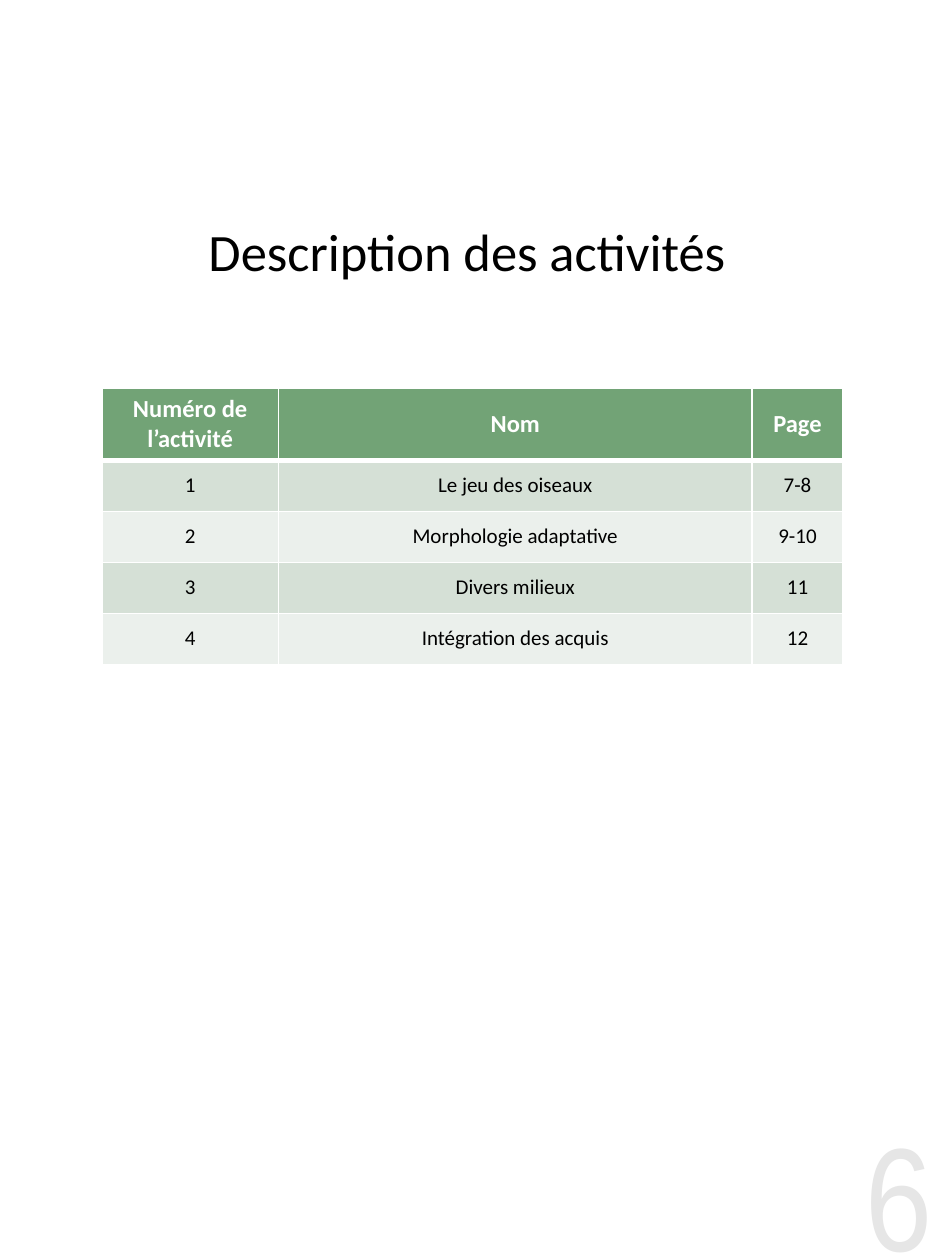
from lxml.etree import SubElement
from pptx import Presentation
from pptx.dml.color import RGBColor
from pptx.enum.text import MSO_ANCHOR, PP_ALIGN
from pptx.oxml.ns import qn
from pptx.util import Inches, Pt

COLORS = {"white": "FFFFFF", "black": "000000", "head": "72A376",
          "odd": "D5E0D6", "even": "EBF0EC", "number": "E6E6E6"}


def style(frame, size, color, bold=False, face="Calibri", align=PP_ALIGN.CENTER):
    for para in frame.paragraphs:
        para.alignment = align
        para.font.name = face
        para.font.size = Pt(size)
        para.font.bold = bold
        para.font.color.rgb = RGBColor.from_string(COLORS[color])


def border(cell, side, width):
    """Draw a white line on one side (L, R, T or B) of the cell."""
    line = SubElement(cell._tc.get_or_add_tcPr(), qn("a:ln" + side),
                      w=str(Pt(width)))
    fill = SubElement(line, qn("a:solidFill"))
    SubElement(fill, qn("a:srgbClr"), val=COLORS["white"])


deck = Presentation()
deck.slide_width, deck.slide_height = Inches(7.5), Inches(10)
slide = deck.slides.add_slide(deck.slide_layouts[5])

# Title
title = slide.shapes.title
title.left, title.top = Inches(1.55), Inches(1.61)
title.width, title.height = Inches(4.41), Inches(0.75)
title.fill.solid()
title.fill.fore_color.rgb = RGBColor.from_string(COLORS["white"])
title.text_frame.text = "Description des activités "
title.text_frame.vertical_anchor = MSO_ANCHOR.MIDDLE
style(title.text_frame, 30, "black")

# Table of activities
rows = [
    ("Numéro de\nl’activité", "Nom", "Page"),
    ("1", "Le jeu des oiseaux", "7-8"),
    ("2", "Morphologie adaptative", "9-10"),
    ("3", "Divers milieux", "11"),
    ("4", "Intégration des acquis", "12"),
]
widths = [1.4, 3.76, 0.72]
heights = [0.57] + [0.405] * 4
table = slide.shapes.add_table(len(rows), len(widths), Inches(0.81), Inches(3.08),
                               Inches(sum(widths)), Inches(sum(heights))).table
for col, width in zip(table.columns, widths):
    col.width = Inches(width)
for r, (row, height) in enumerate(zip(rows, heights)):
    table.rows[r].height = Inches(height)
    head = r == 0
    shade = "head" if head else "odd" if r % 2 else "even"
    for c, text in enumerate(row):
        cell = table.cell(r, c)
        cell.text = text
        cell.vertical_anchor = MSO_ANCHOR.MIDDLE
        style(cell.text_frame, 14 if head else 12,
              "white" if head else "black", bold=head)
        for side in "LRTB":
            thick = (head and side == "B") or (r == 1 and side == "T")
            border(cell, side, 3 if thick else 1)
        cell.fill.solid()
        cell.fill.fore_color.rgb = RGBColor.from_string(COLORS[shade])

# Page number
number = slide.shapes.add_textbox(Inches(6.4), Inches(8.77), Inches(1), Inches(1.23))
frame = number.text_frame
frame.word_wrap = True
frame.margin_left = frame.margin_right = frame.margin_top = frame.margin_bottom = 0
frame.text = "6"
style(frame, 84, "number", face="Arial Narrow", align=PP_ALIGN.RIGHT)

deck.save("out.pptx")
